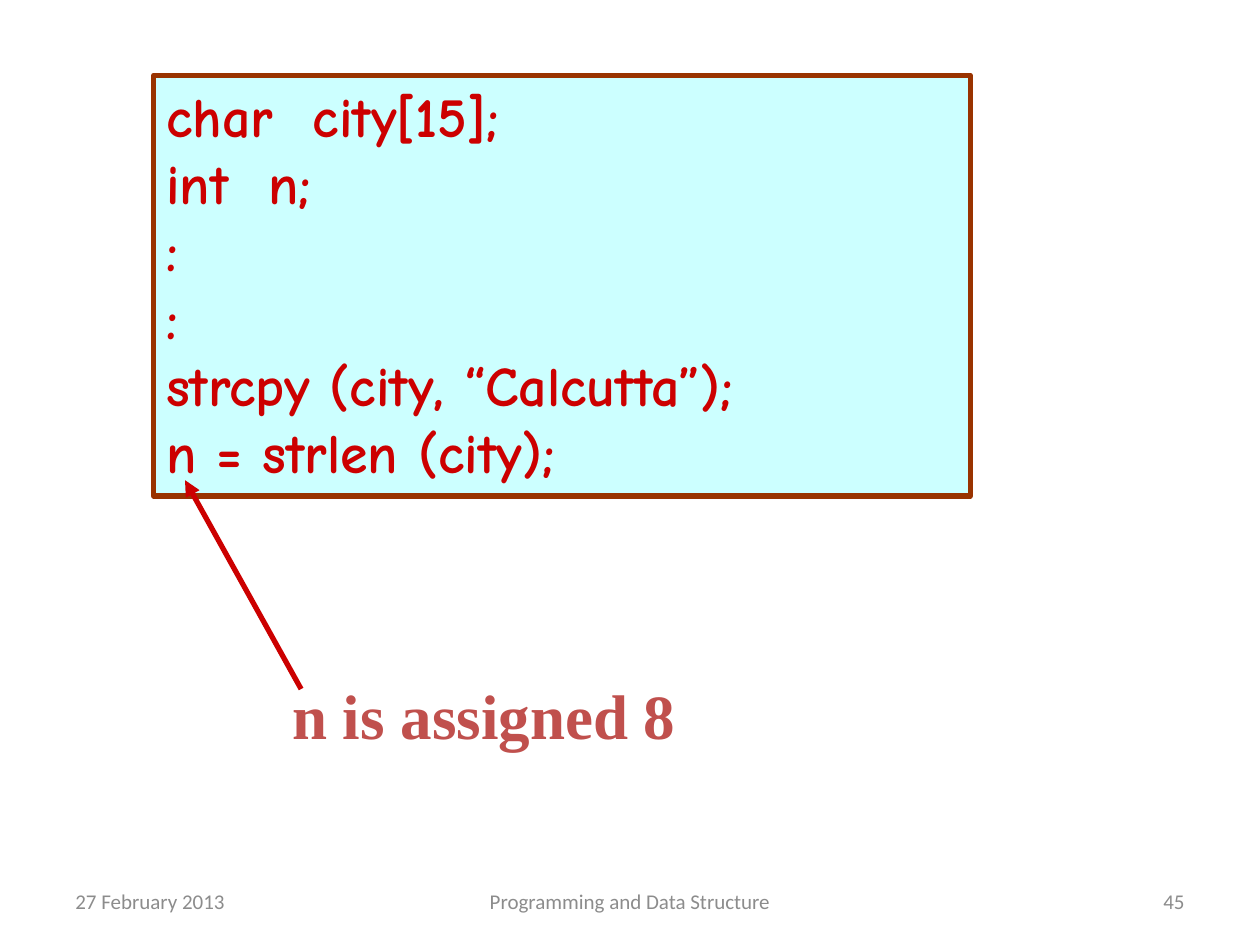
import pptx
import pptx.dml.color
import pptx.enum.shapes
import pptx.enum.text
import pptx.oxml.ns
import pptx.util
from lxml import etree
from pptx.dml.color import RGBColor
from pptx.util import Cm

RED = RGBColor(0xCC, 0x00, 0x00)
BROWN = RGBColor(0x99, 0x33, 0x00)
PALE_CYAN = RGBColor(0xCC, 0xFF, 0xFF)
BRICK = RGBColor(0xC0, 0x50, 0x4D)
GREY = RGBColor(0x8C, 0x8C, 0x8C)

ALIGN = pptx.enum.text.PP_ALIGN
ANCHOR = pptx.enum.text.MSO_ANCHOR

CODE = """char  city[15];
int  n;
:
:
strcpy (city, “Calcutta”);
n = strlen (city);"""

# Footer entries: text, left, width, alignment
FOOTER = [
    ("27 February 2013", 1.27, 5.93, ALIGN.LEFT),
    ("Programming and Data Structure", 8.68, 8.04, ALIGN.CENTER),
    ("45", 18.2, 5.93, ALIGN.RIGHT),
]


def write_text(shape, text, font, size, color, bold=False,
               align=ALIGN.LEFT, anchor=ANCHOR.TOP):
    frame = shape.text_frame
    frame.text = text
    frame.word_wrap = True
    frame.vertical_anchor = anchor
    for paragraph in frame.paragraphs:
        paragraph.alignment = align
        for run in paragraph.runs:
            run.font.name = font
            run.font.size = pptx.util.Pt(size)
            run.font.bold = bold
            run.font.color.rgb = color


def add_code_box(slide):
    code_box = slide.shapes.add_shape(
        pptx.enum.shapes.MSO_SHAPE.RECTANGLE,
        Cm(3.1), Cm(1.52), Cm(16.46), Cm(8.48))
    code_box.shadow.inherit = False
    code_box.fill.solid()
    code_box.fill.fore_color.rgb = PALE_CYAN
    code_box.line.color.rgb = BROWN
    code_box.line.width = pptx.util.Pt(3)
    write_text(code_box, CODE, "Comic Neue", 32, RED, bold=True)


def add_arrow(shapes, start, end):
    arrow = shapes.add_connector(
        pptx.enum.shapes.MSO_CONNECTOR.STRAIGHT, *start, *end)
    arrow.line.color.rgb = RED
    arrow.line.width = pptx.util.Pt(3)
    qn = pptx.oxml.ns.qn
    etree.SubElement(arrow.line._get_or_add_ln(), qn("a:tailEnd"), type="triangle")
    etree.SubElement(arrow._element.spPr, qn("a:effectLst"))


def add_callout(slide):
    callout = slide.shapes.add_group_shape()
    label = callout.shapes.add_textbox(Cm(5.64), Cm(13.51), Cm(8.99), Cm(1.78))
    write_text(label, "n is assigned 8", "Times New Roman", 36, BRICK, bold=True)
    add_arrow(callout.shapes, (Cm(6.07), Cm(13.89)), (Cm(3.73), Cm(9.68)))


def add_footer(slide):
    for text, left, width, align in FOOTER:
        entry = slide.shapes.add_textbox(Cm(left), Cm(17.65), Cm(width), Cm(1.02))
        write_text(entry, text, "Calibri", 12, GREY, align=align, anchor=ANCHOR.MIDDLE)


def main():
    deck = pptx.Presentation()
    deck.slide_width, deck.slide_height = Cm(25.4), Cm(19.05)
    slide = deck.slides.add_slide(deck.slide_layouts[6])  # blank: no title here
    add_footer(slide)
    add_code_box(slide)
    add_callout(slide)
    deck.save("out.pptx")


if __name__ == "__main__":
    main()
